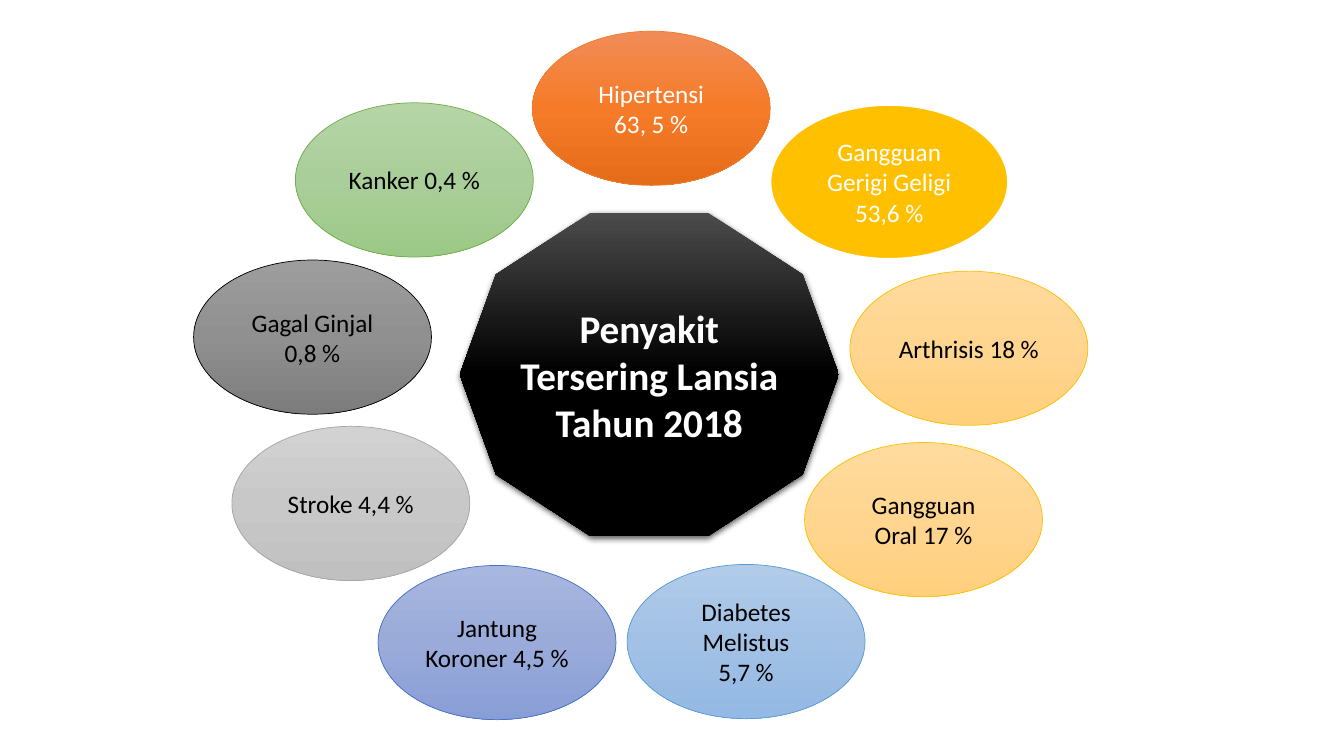
import copy

import pptx
import pptx.dml.color
import pptx.enum.shapes
import pptx.enum.text
import pptx.oxml
import pptx.oxml.ns
import pptx.util

Inches, Pt = pptx.util.Inches, pptx.util.Pt
SHAPE = pptx.enum.shapes.MSO_SHAPE
WHITE, BLACK = "FFFFFF", "000000"
FONT = "Calibri"

TOPIC = "Penyakit Tersering Lansia Tahun 2018"
TOPIC_BOX = (4.56, 2.11, 3.76, 3.21)
TOPIC_FILL = ("4B4B4B", BLACK, BLACK)

OVAL_SIZE = (2.36, 1.53)
AMBER = ("FFDB9E", "FFD590", "FFD07C")
# text, (left, top), fill, line colour, line width, text colour
DISEASES = [
    ("Hipertensi\n63, 5 %", (5.28, 0.31), ("F18C57", "F67B28", "E56C19"), "ED7D31", 0.5, WHITE),
    ("Gangguan Gerigi Geligi 53,6 %", (7.64, 1.04), ("FFC000",), WHITE, 1.5, WHITE),
    ("Arthrisis 18 %", (8.43, 2.69), AMBER, "FFC000", 0.5, BLACK),
    ("Gangguan Oral 17 %", (7.98, 4.39), AMBER, "FFC000", 0.5, BLACK),
    ("Diabetes Melistus\n5,7 %", (6.22, 5.6), ("B1CBE9", "A3C1E5", "93B9E4"), "5B9BD5", 0.5, BLACK),
    ("Jantung Koroner 4,5 %", (3.75, 5.61), ("A8B7DF", "9AABD9", "889ED7"), "4472C4", 0.5, BLACK),
    ("Stroke 4,4 %", (2.3, 4.23), ("D2D2D2", "C8C8C8", "C0C0C0"), "A5A5A5", 0.5, BLACK),
    ("Gagal Ginjal 0,8 %", (1.92, 2.58), ("9D9D9D", "909090", "7C7C7C"), BLACK, 0.5, BLACK),
    ("Kanker 0,4 %", (2.93, 1.02), ("B5D5A7", "AACE9A", "9CC987"), "70AD47", 0.5, BLACK),
]


def rgb(color):
    return pptx.dml.color.RGBColor.from_string(color)


def paint(sp, colors):
    """Fill solid with one colour, or top to bottom with three."""
    if len(colors) == 1:
        sp.fill.solid()
        sp.fill.fore_color.rgb = rgb(colors[0])
        return
    sp.fill.gradient()
    sp.fill.gradient_angle = 270
    stop_list = sp._element.spPr.find(".//" + pptx.oxml.ns.qn("a:gsLst"))
    stop_list.append(copy.deepcopy(stop_list[0]))
    for i, (stop, color) in enumerate(zip(sp.fill.gradient_stops, colors)):
        stop.position = i / 2
        stop.color.rgb = rgb(color)


def add_bubble(slide, kind, box, text, colors, size, text_color, bold=False):
    sp = slide.shapes.add_shape(kind, *map(Inches, box))
    sp.shadow.inherit = False
    paint(sp, colors)
    sp.line.fill.background()
    tf = sp.text_frame
    tf.text = text
    tf.word_wrap = True
    tf.vertical_anchor = pptx.enum.text.MSO_ANCHOR.MIDDLE
    for p in tf.paragraphs:
        p.alignment = pptx.enum.text.PP_ALIGN.CENTER
        for r in p.runs:
            r.font.name = FONT
            r.font.size = Pt(size)
            r.font.bold = bold
            r.font.color.rgb = rgb(text_color)
    return sp


def add_drop_shadow(sp):
    effects = sp._element.spPr.find(pptx.oxml.ns.qn("a:effectLst"))
    effects.append(pptx.oxml.parse_xml(
        f'<a:outerShdw {pptx.oxml.ns.nsdecls("a")} blurRad="{Pt(4.5)}" dist="{Pt(1.5)}" '
        'dir="5400000" algn="ctr" rotWithShape="0">'
        f'<a:srgbClr val="{BLACK}"><a:alpha val="63000"/></a:srgbClr></a:outerShdw>'))


def main():
    prs = pptx.Presentation()
    prs.slide_width, prs.slide_height = Inches(13.33), Inches(7.5)
    slide = prs.slides.add_slide(prs.slide_layouts[6])

    topic = add_bubble(slide, SHAPE.DECAGON, TOPIC_BOX, TOPIC, TOPIC_FILL, 28, WHITE, bold=True)
    add_drop_shadow(topic)

    for text, corner, colors, line_color, line_width, text_color in DISEASES:
        oval = add_bubble(slide, SHAPE.OVAL, corner + OVAL_SIZE, text, colors, 18, text_color)
        oval.line.color.rgb = rgb(line_color)
        oval.line.width = Pt(line_width)

    prs.save("out.pptx")


if __name__ == "__main__":
    main()
